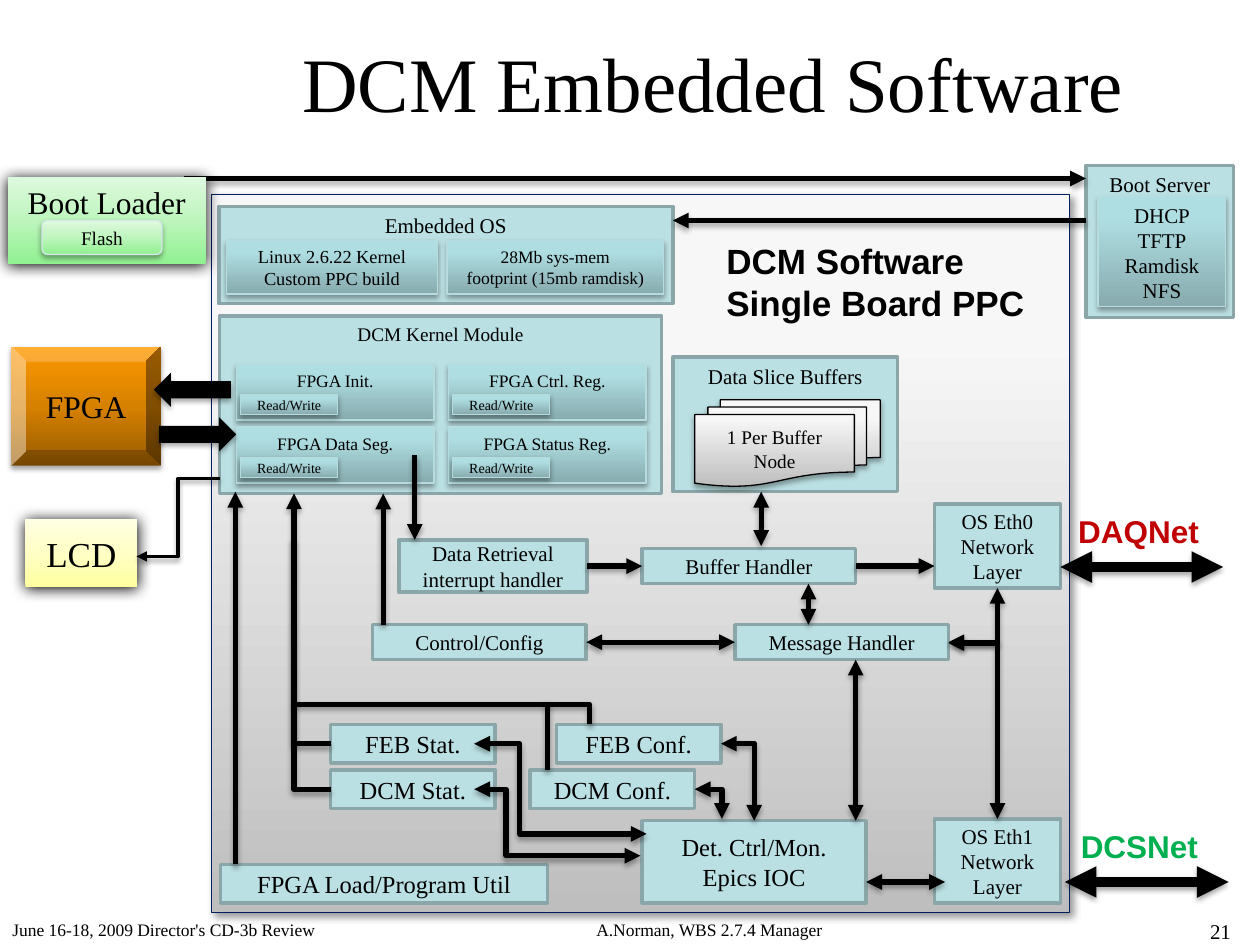
from copy import deepcopy

from lxml.etree import SubElement
from pptx import Presentation
from pptx.dml.color import RGBColor
from pptx.enum.shapes import MSO_CONNECTOR, MSO_SHAPE
from pptx.enum.text import MSO_ANCHOR, PP_ALIGN
from pptx.oxml.ns import qn
from pptx.util import Pt

THEME = {
    "serif": "Times New Roman",
    "sans": "Arial",
    "ink": "000000",
    "daq": "C00000",
    "dcs": "00B050",
    "sizes": {"title": 44, "label": 20, "large": 18, "medium": 14, "body": 12,
              "small": 11, "kernel": 10.5, "detail": 10, "tiny": 8},
    "shadows": {"soft": (35, 3.1, 1.8, 90), "panel": (40, 4, 3, 45), "glow": (100, 8.5, 1, 90)},
    "styles": {
        "panel": ([(0, "BEBEBE"), (0.8, "F7F7F7"), (1, "F8F8F8")], "002060", 0.75, "panel"),
        "paper": ([(0, "BEBEBE"), (0.8, "F7F7F7"), (1, "F8F8F8")], "000000", 0.75, "soft"),
        "plain": ([(0, "BBE0E3")], "8AA6A8", 2, None),
        "teal": ([(0, "87ABAE"), (0.8, "AFDEE2"), (1, "AFE0E4")], "B6DCDF", 0.75, "soft"),
        "orange": ([(0, "975B00"), (0.5, "D78100"), (1, "FF9900")], None, 0, "soft"),
        "yellow": ([(0, "FFFFA0"), (0.5, "FFFFC5"), (1, "FFFFE3")], None, 0, "glow"),
        "green": ([(0, "91F191"), (0.5, "BDF5BD"), (1, "DFF9DF")], None, 0, "glow"),
        "flash": ([(0, "91F191"), (0.5, "BDF5BD"), (1, "DFF9DF")], "D5E8EA", 0.75, "soft"),
        "black": ([(0, "000000")], None, 0, "soft"),
    },
}
SIZES = THEME["sizes"]

presentation = Presentation()
presentation.slide_width, presentation.slide_height = Pt(720), Pt(540)
slide = presentation.slides.add_slide(presentation.slide_layouts[6])
boxes = {}


def add_shadow(effects, name):
    opacity, blur, distance, angle = THEME["shadows"][name]
    shadow = SubElement(effects, qn("a:outerShdw"), blurRad=str(Pt(blur)), dist=str(Pt(distance)),
                        dir=str(angle * 60000), rotWithShape="0")
    color = SubElement(shadow, qn("a:srgbClr"), val=THEME["ink"])
    SubElement(color, qn("a:alpha"), val=str(opacity * 1000))


def add_box(left, top, width, height, text, size, style="plain", anchor=MSO_ANCHOR.MIDDLE,
            preset=MSO_SHAPE.RECTANGLE):
    stops, line_color, line_width, shadow = THEME["styles"][style]
    shape = slide.shapes.add_shape(preset, Pt(left), Pt(top), Pt(width), Pt(height))
    shape.shadow.inherit = False
    properties = shape._element.spPr
    if len(stops) == 1:
        shape.fill.solid()
        shape.fill.fore_color.rgb = RGBColor.from_string(stops[0][1])
    else:
        shape.fill.gradient()
        shape.fill.gradient_angle = 90
        stop_list = properties.find(".//" + qn("a:gsLst"))
        stop_list.append(deepcopy(stop_list[-1]))
        for stop, (position, color) in zip(shape.fill.gradient_stops, stops):
            stop.position = position
            stop.color.rgb = RGBColor.from_string(color)
    if line_color:
        shape.line.color.rgb = RGBColor.from_string(line_color)
        shape.line.width = Pt(line_width)
    else:
        shape.line.fill.background()
    if shadow:
        add_shadow(properties.find(qn("a:effectLst")), shadow)
    if text:
        shape.text_frame.text = text
        shape.text_frame.word_wrap = True
        shape.text_frame.vertical_anchor = anchor
        paragraph = shape.text_frame.paragraphs[0]
        paragraph.alignment = PP_ALIGN.CENTER
        paragraph.font.size = Pt(SIZES[size])
        paragraph.font.name = THEME["serif"]
        paragraph.font.color.rgb = RGBColor.from_string(THEME["ink"])
        boxes[text] = shape


TOP = MSO_ANCHOR.TOP
add_box(121, 111, 490, 410.5, "", "body", "panel")
for left, top, width, height, text, size in [
    (620.5, 94.5, 84.5, 87, "Boot Server", "body"),
    (125, 118, 259.5, 55.5, "Embedded OS", "body"),
    (125.5, 180.5, 252.5, 101.5, "DCM Kernel Module", "small"),
    (384.5, 204, 128.5, 77, "Data Slice Buffers", "body"),
]:
    add_box(left, top, width, height, text, size, anchor=TOP)

add_box(627.5, 112, 73, 63, "DHCP\vTFTP\vRamdisk\vNFS", "body", "teal", TOP)
add_box(129.5, 137.5, 120.5, 30.5, "Linux 2.6.22 Kernel\vCustom PPC build", "kernel", "teal")
add_box(255.5, 137.5, 123.5, 30.5, "28Mb sys-mem\vfootprint (15mb ramdisk)", "detail", "teal")
add_box(397, 228.5, 106, 49.5, "1 Per Buffer Node", "small", "paper",
        preset=MSO_SHAPE.FLOWCHART_MULTIDOCUMENT)

registers = ["FPGA Init.", "FPGA Ctrl. Reg.", "FPGA Data Seg.", "FPGA Status Reg."]
for index, register in enumerate(registers):
    row, column = divmod(index, 2)
    left, top = 135 + 121.25 * column, 208 + 36 * row
    add_box(left, top, 113, 32, register, "detail", "teal", TOP)
    add_box(left + 2.5, top + 17.5, 55.5, 11.5, "Read/Write", "tiny", "teal")

for left, top, width, height, text, size in [
    (126, 494, 187, 22, "FPGA Load/Program Util", "medium"),
    (228, 308.5, 107.5, 30, "Data Retrieval interrupt handler", "body"),
    (367, 313.5, 122, 20, "Buffer Handler", "body"),
    (534, 288, 72, 48, "OS Eth0 Network Layer", "body"),
    (534, 468, 72, 48, "OS Eth1 Network Layer", "body"),
    (420, 357, 122, 20, "Message Handler", "body"),
    (213, 357, 122, 20, "Control/Config", "body"),
    (367, 469, 128, 47, "Det. Ctrl/Mon.\vEpics IOC", "medium"),
    (318, 414, 94, 22, "FEB Conf.", "medium"),
    (303, 440, 94, 22, "DCM Conf.", "medium"),
    (189, 414, 94, 22, "FEB Stat.", "medium"),
    (189, 440, 94, 22, "DCM Stat.", "medium"),
]:
    add_box(left, top, width, height, text, size)

add_box(6.5, 198, 85.5, 68, "FPGA", "large", "orange", preset=MSO_SHAPE.BEVEL)
add_box(88, 213, 44, 19.5, "", "body", "black", preset=MSO_SHAPE.LEFT_ARROW)
add_box(91, 238.5, 44, 19.5, "", "body", "black", preset=MSO_SHAPE.RIGHT_ARROW)
add_box(14.5, 296.5, 64, 39, "LCD", "label", "yellow")

NONE, END, BOTH = (), ("tailEnd",), ("headEnd", "tailEnd")
straight, corner, step = "line", "bentConnector2", "bentConnector3"
for preset, start_x, start_y, end_x, end_y, heads, width, bend, start_box, end_box in [
    (straight, 105, 102, 620.5, 102, END, 3, None, None, None),
    (straight, 620.5, 126, 384.5, 126, END, 3, None, None, None),
    (straight, 134.5, 494, 134.5, 281, END, 3, None, None, None),
    (straight, 237, 260, 237, 308.5, END, 3, None, None, None),
    (straight, 219, 357, 219, 282, END, 3, None, None, None),
    (straight, 435, 312, 435, 281, BOTH, 3, None, None, None),
    (straight, 335.5, 323.5, 367, 323.5, END, 3, None,
     "Data Retrieval interrupt handler", "Buffer Handler"),
    (straight, 489, 323.5, 534, 323.5, END, 3, None, "Buffer Handler", None),
    (straight, 335, 367, 420, 367, BOTH, 3, None, "Control/Config", "Message Handler"),
    (straight, 606, 324, 699, 324, BOTH, 6, None, None, None),
    (straight, 608.5, 504, 702, 504, BOTH, 6, None, None, None),
    (straight, 462, 357, 462, 333.5, BOTH, 3, None, None, None),
    (straight, 495, 504, 540, 504, BOTH, 3, None, None, None),
    (straight, 489, 377, 489, 469, BOTH, 3, None, None, None),
    (straight, 313, 401, 313, 440, NONE, 3, None, None, None),
    (corner, 542, 367, 570, 336, BOTH, 3, None, None, None),
    (corner, 542, 367.5, 570, 468, BOTH, 3, None, None, None),
    (corner, 412, 425, 431, 469, BOTH, 3, None, None, None),
    (corner, 397, 451, 412.5, 468, BOTH, 3, None, None, None),
    (corner, 189, 425, 168, 282, END, 3, None, None, None),
    (corner, 189, 451, 168, 308, NONE, 3, None, None, None),
    (corner, 168, 402.5, 337, 414, NONE, 3, None, None, None),
    (step, 271, 425, 369.5, 476.5, BOTH, 3, 26400, None, None),
    (step, 271, 451, 366, 489, BOTH, 3, 19100, None, None),
    (step, 125.5, 273.5, 78, 318, END, 2, 50000, None, None),
]:
    kind = MSO_CONNECTOR.STRAIGHT if preset == straight else MSO_CONNECTOR.ELBOW
    connector = slide.shapes.add_connector(kind, Pt(start_x), Pt(start_y), Pt(end_x), Pt(end_y))
    if start_box:
        connector.begin_connect(boxes[start_box], 3)
    if end_box:
        connector.end_connect(boxes[end_box], 1)
    connector.line.color.rgb = RGBColor.from_string(THEME["ink"])
    connector.line.width = Pt(width)
    properties = connector._element.spPr
    geometry = properties.find(qn("a:prstGeom"))
    geometry.set("prst", preset)
    if bend:
        SubElement(geometry.find(qn("a:avLst")), qn("a:gd"), name="adj1", fmla=f"val {bend}")
    for head in heads:
        SubElement(properties.find(qn("a:ln")), qn(f"a:{head}"), type="triangle")
    add_shadow(SubElement(properties, qn("a:effectLst")), "soft")

add_box(4.5, 101, 113, 50, "Boot Loader", "large", "green", TOP)
add_box(24, 126, 68.5, 19.5, "Flash", "small", "flash", preset=MSO_SHAPE.ROUNDED_RECTANGLE)

LEFT, CENTER, RIGHT = PP_ALIGN.LEFT, PP_ALIGN.CENTER, PP_ALIGN.RIGHT
for left, top, width, height, text, size, font, color, bold, alignment in [
    (136, 19.5, 543, 54, "DCM Embedded Software", "title", "serif", "ink", False, CENTER),
    (0, 521.5, 258.5, 18.5, "June 16-18, 2009 Director's CD-3b Review", "detail", "serif", "ink",
     False, LEFT),
    (270.5, 521.5, 269.5, 18.5, "A.Norman, WBS 2.7.4 Manager", "detail", "serif", "ink",
     False, CENTER),
    (543, 521.5, 167.5, 18.5, "21", "body", "serif", "ink", False, RIGHT),
    (609, 289, 84, 29, "DAQNet", "large", "sans", "daq", True, LEFT),
    (610.5, 469, 82, 29, "DCSNet", "large", "sans", "dcs", True, LEFT),
    (408, 133.5, 186.5, 55.5, "DCM Software\vSingle Board PPC", "label", "sans", "ink", True, LEFT),
]:
    label = slide.shapes.add_textbox(Pt(left), Pt(top), Pt(width), Pt(height))
    label.text_frame.text = text
    label.text_frame.word_wrap = font == "serif"
    if size == "title":
        label.text_frame.vertical_anchor = MSO_ANCHOR.MIDDLE
    paragraph = label.text_frame.paragraphs[0]
    paragraph.alignment = alignment
    paragraph.font.size = Pt(SIZES[size])
    paragraph.font.name = THEME[font]
    paragraph.font.bold = bold
    paragraph.font.color.rgb = RGBColor.from_string(THEME[color])

presentation.save("out.pptx")
